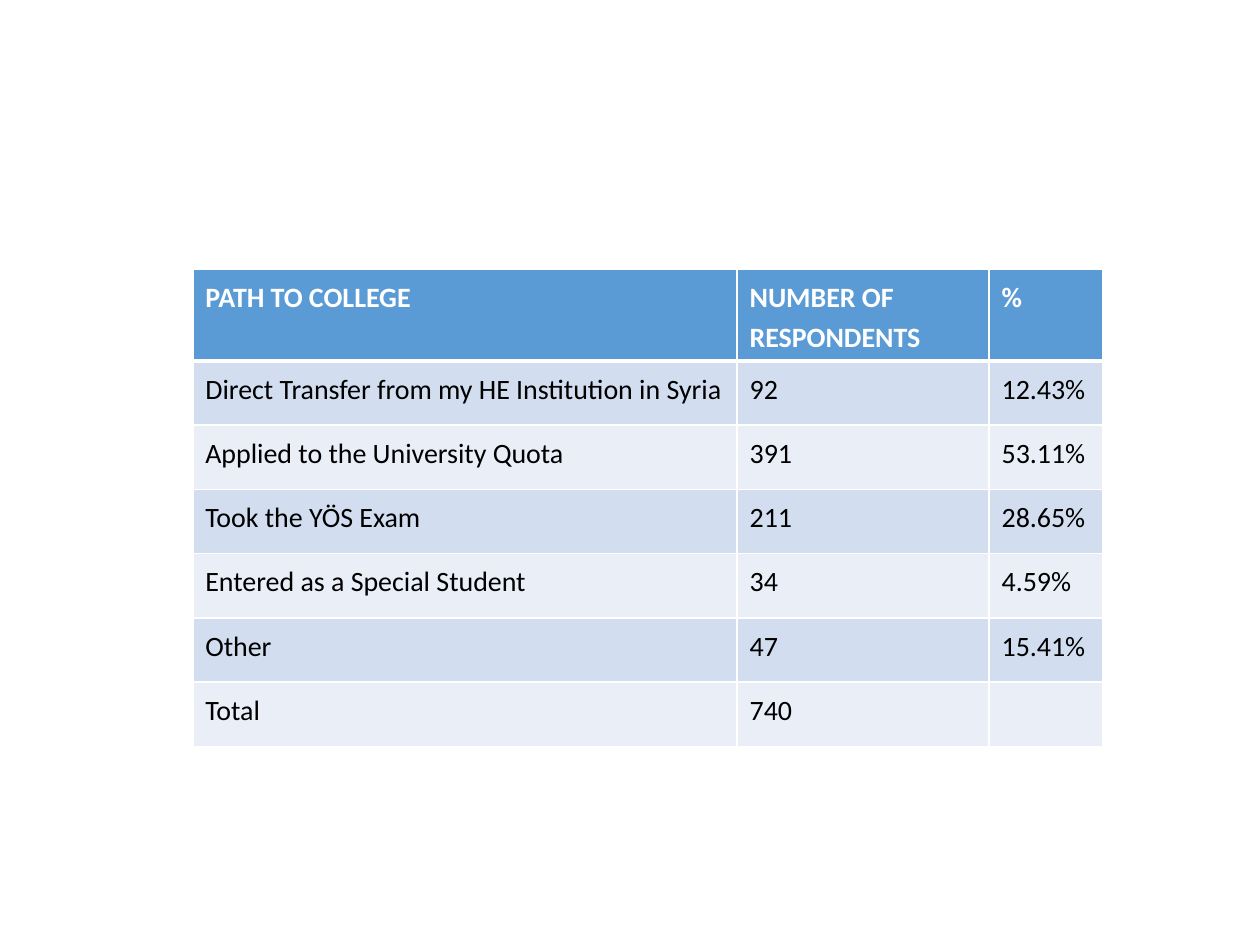
from lxml.etree import SubElement
from pptx import Presentation
from pptx.dml.color import RGBColor
from pptx.oxml.ns import qn
from pptx.util import Inches, Pt

HEADER = ("PATH TO COLLEGE", "NUMBER OF RESPONDENTS", "%")
PATHS = [
    ("Direct Transfer from my HE Institution in Syria", "92", "12.43%"),
    ("Applied to the University Quota", "391", "53.11%"),
    ("Took the YÖS Exam", "211", "28.65%"),
    ("Entered as a Special Student", "34", "4.59%"),
    ("Other", "47", "15.41%"),
    ("Total", "740", ""),
]
ROWS = [HEADER] + PATHS
COLUMN_WIDTHS = (4.32, 2, 0.9)
HEADER_HEIGHT, ROW_HEIGHT = 0.64, 0.51
LEFT, TOP = 1.53, 2.14
WHITE, BLACK, HEADER_FILL = "FFFFFF", "000000", "5B9BD5"
BANDS = ("D2DEEF", "EAEFF7")


def color(value):
    return RGBColor.from_string(value)


def add_borders(cell, bottom_width):
    properties = cell._tc.get_or_add_tcPr()
    for side, width in (("L", 1), ("R", 1), ("T", 1), ("B", bottom_width)):
        line = SubElement(properties, qn(f"a:ln{side}"), w=str(Pt(width)))
        fill = SubElement(line, qn("a:solidFill"))
        SubElement(fill, qn("a:srgbClr"), val=WHITE)


def style_cell(cell, text, fill, text_color, bold, bottom_width):
    add_borders(cell, bottom_width)
    cell.fill.solid()
    cell.fill.fore_color.rgb = color(fill)
    cell.text = text
    paragraph = cell.text_frame.paragraphs[0]
    paragraph.line_spacing = 1.15
    font = paragraph.font
    font.name, font.size, font.bold = "Calibri", Pt(16), bold
    font.color.rgb = color(text_color)


def main():
    presentation = Presentation()
    presentation.slide_width, presentation.slide_height = Inches(10), Inches(7.5)
    slide = presentation.slides.add_slide(presentation.slide_layouts[6])
    heights = [HEADER_HEIGHT] + [ROW_HEIGHT] * len(PATHS)
    table = slide.shapes.add_table(
        len(ROWS), len(HEADER), Inches(LEFT), Inches(TOP),
        Inches(sum(COLUMN_WIDTHS)), Inches(sum(heights))).table
    for column, width in zip(table.columns, COLUMN_WIDTHS):
        column.width = Inches(width)
    for index, (row, height, texts) in enumerate(zip(table.rows, heights, ROWS)):
        row.height = Inches(height)
        if index == 0:
            style = (HEADER_FILL, WHITE, True, 3)
        else:
            style = (BANDS[(index - 1) % 2], BLACK, False, 1)
        for cell, text in zip(row.cells, texts):
            style_cell(cell, text, *style)
    presentation.save("out.pptx")


if __name__ == "__main__":
    main()
